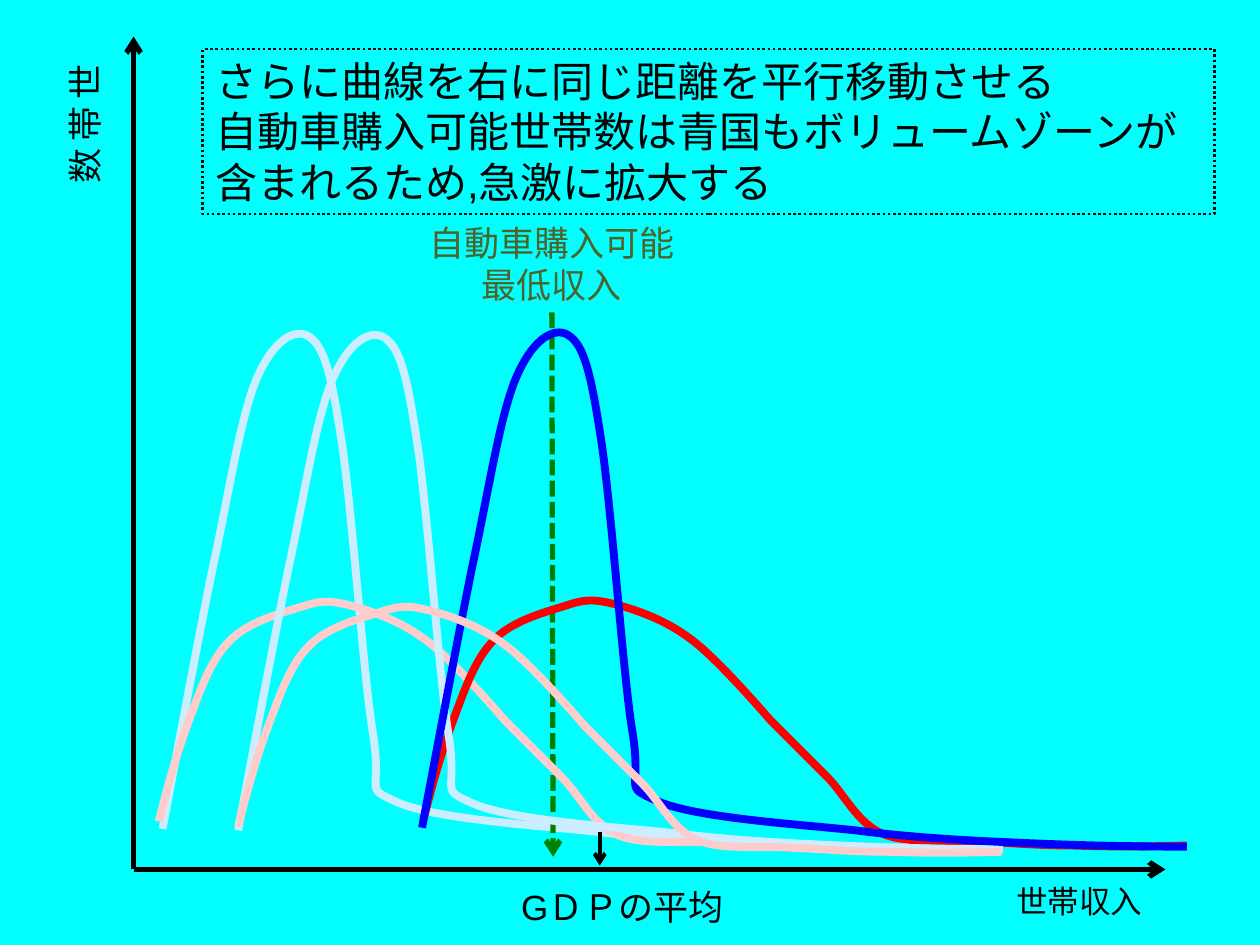
import dataclasses

import lxml.etree
import pptx
import pptx.dml.color
import pptx.enum.dml
import pptx.enum.shapes
import pptx.enum.text
import pptx.oxml.ns
import pptx.util

EMU_PER_PX = 9144  # 100 px to the inch
qn = pptx.oxml.ns.qn
Dash = pptx.enum.dml.MSO_LINE
Align = pptx.enum.text.PP_ALIGN
Point = tuple[int, int]


@dataclasses.dataclass(frozen=True)
class Theme:
    background: str = "00FFFF"
    ink: str = "000000"
    threshold_text: str = "4F6228"
    threshold_line: str = "008000"
    blue: str = "0000FF"
    pale_blue: str = "CCECFF"
    red: str = "FF0000"
    pale_red: str = "FFCCCC"
    font: str = "Arial"
    axis_font: str = "Calibri"
    message_size: int = 24
    label_size: int = 20
    axis_size: int = 18
    curve_width: float = 4.5
    axis_width: float = 3
    marker_width: float = 2.25
    frame_width: float = 1.5


THEME = Theme()


@dataclasses.dataclass(frozen=True)
class Label:
    lines: tuple[str, ...]
    left: int
    top: int
    width: int
    height: int
    size: int = THEME.label_size
    font: str = THEME.font
    color: str = THEME.ink
    align: Align = Align.LEFT
    upright: bool = False
    framed: bool = False


@dataclasses.dataclass(frozen=True)
class Arrow:
    start: Point
    end: Point
    color: str = THEME.ink
    width: float = THEME.axis_width
    dash: Dash | None = None


@dataclasses.dataclass(frozen=True)
class Curve:
    """A distribution outline: start, then segments of one (line) or three (Bézier) points."""
    start: Point
    segments: tuple[tuple[Point, ...], ...]
    color: str
    shift: Point = (0, 0)


TALL_START = (129, 658)
TALL = (
    ((143, 584), (157, 509), (169, 450)),
    ((182, 390), (191, 330), (204, 300)),
    ((217, 270), (234, 260), (245, 267)),
    ((256, 274), (262, 291), (270, 343)),
    ((279, 396), (288, 533), (296, 582)),
    ((304, 631), (287, 624), (316, 637)),
    ((346, 650), (424, 655), (472, 660)),
    ((520, 666), (560, 668), (604, 670)),
    ((648, 672), (692, 673), (736, 673)),
)
WIDE_START = (126, 652)
WIDE = (
    ((133, 624), (141, 596), (150, 572)),
    ((159, 548), (167, 524), (182, 509)),
    ((196, 494), (222, 487), (238, 482)),
    ((253, 477), (259, 476), (276, 480)),
    ((292, 484), (317, 492), (338, 508)),
    ((359, 523), (401, 572), (401, 572)),
    ((446, 617),),
    ((461, 632), (470, 654), (491, 663)),
    ((511, 671), (543, 667), (568, 669)),
    ((593, 670), (614, 672), (641, 672)),
    ((668, 673), (700, 673), (732, 672)),
)

# Back to front
ELEMENTS = (
    Label(("自動車購入可能", "最低収入"), 323, 171, 230, 77,
          color=THEME.threshold_text, align=Align.CENTER),
    Arrow((106, 690), (925, 690)),
    Arrow((106, 690), (106, 29)),
    Label(("世帯数",), 5, 83, 121, 44, upright=True),
    Label((" 世帯収入",), 791, 695, 134, 44, size=THEME.axis_size, font=THEME.axis_font),
    Label(("GＤＰの平均",), 336, 698, 316, 44, align=Align.CENTER),
    Curve(TALL_START, TALL, THEME.pale_blue),
    Arrow((476, 660), (476, 687), width=THEME.marker_width),
    Arrow((438, 248), (439, 680), THEME.threshold_line, dash=Dash.SQUARE_DOT),
    Curve(WIDE_START, WIDE, THEME.pale_red),
    Curve(WIDE_START, WIDE, THEME.red, (210, -1)),
    Curve(TALL_START, TALL, THEME.pale_blue, (60, 1)),
    Label(("さらに曲線を右に同じ距離を平行移動させる",
           "自動車購入可能世帯数は青国もボリュームゾーンが含まれるため,急激に拡大する"),
          161, 39, 803, 131, size=THEME.message_size, framed=True),
    Curve(TALL_START, TALL, THEME.blue, (206, -1)),
    Curve(WIDE_START, WIDE, THEME.pale_red, (63, 4)),
)


def px(*lengths: int) -> list[pptx.util.Emu]:
    return [pptx.util.Emu(length * EMU_PER_PX) for length in lengths]


def rgb(color: str) -> pptx.dml.color.RGBColor:
    return pptx.dml.color.RGBColor.from_string(color)


def style_line(line, color: str, width: float, dash: Dash | None = None) -> None:
    line.color.rgb = rgb(color)
    line.width = pptx.util.Pt(width)
    if dash is not None:
        line.dash_style = dash


def draw_label(page, label: Label) -> None:
    place = px(label.left, label.top, label.width, label.height)
    if label.framed:
        box = page.shapes.add_shape(pptx.enum.shapes.MSO_SHAPE.RECTANGLE, *place)
        box.shadow.inherit = False
        box.fill.background()
        style_line(box.line, THEME.ink, THEME.frame_width, Dash.ROUND_DOT)
    else:
        box = page.shapes.add_textbox(*place)
    frame = box.text_frame
    frame.word_wrap = True
    frame.auto_size = pptx.enum.text.MSO_AUTO_SIZE.SHAPE_TO_FIT_TEXT
    frame.vertical_anchor = pptx.enum.text.MSO_ANCHOR.TOP
    if label.upright:
        box.rotation = 270
        box.element.find(".//" + qn("a:bodyPr")).set("vert", "eaVert")
    for index, line in enumerate(label.lines):
        para = frame.add_paragraph() if index else frame.paragraphs[0]
        para.text = line
        para.alignment = label.align
        para.font.name = label.font
        para.font.size = pptx.util.Pt(label.size)
        para.font.color.rgb = rgb(label.color)


def draw_arrow(page, arrow: Arrow) -> None:
    connector = page.shapes.add_connector(
        pptx.enum.shapes.MSO_CONNECTOR.STRAIGHT, *px(*arrow.start, *arrow.end))
    style_line(connector.line, arrow.color, arrow.width, arrow.dash)
    properties = connector.element.spPr
    lxml.etree.SubElement(properties.find(qn("a:ln")), qn("a:tailEnd"), type="arrow")
    lxml.etree.SubElement(properties, qn("a:effectLst"))


def draw_curve(page, curve: Curve) -> None:
    """Join the anchors with lines, then bend the lines that have control points."""
    right, down = curve.shift
    start = (curve.start[0] + right, curve.start[1] + down)
    segments = [[(x + right, y + down) for x, y in segment] for segment in curve.segments]
    anchors = [segment[-1] for segment in segments]
    builder = page.shapes.build_freeform(*start, scale=EMU_PER_PX)
    builder.add_line_segments(anchors, close=False)
    shape = builder.convert_to_shape()
    shape.shadow.inherit = False
    shape.fill.background()
    style_line(shape.line, curve.color, THEME.curve_width)

    left = min(x for x, _ in [start, *anchors])
    top = min(y for _, y in [start, *anchors])
    for line, segment in zip(shape.element.findall(".//" + qn("a:lnTo")), segments):
        if len(segment) == 3:
            bend = lxml.etree.Element(qn("a:cubicBezTo"))
            for x, y in segment:
                lxml.etree.SubElement(bend, qn("a:pt"), x=str(x - left), y=str(y - top))
            line.getparent().replace(line, bend)


def main() -> None:
    deck = pptx.Presentation()
    deck.slide_width, deck.slide_height = px(1000, 750)
    page = deck.slides.add_slide(deck.slide_layouts[6])
    page.background.fill.solid()
    page.background.fill.fore_color.rgb = rgb(THEME.background)
    draw = {Label: draw_label, Arrow: draw_arrow, Curve: draw_curve}
    for element in ELEMENTS:
        draw[type(element)](page, element)
    deck.save("out.pptx")


if __name__ == "__main__":
    main()
